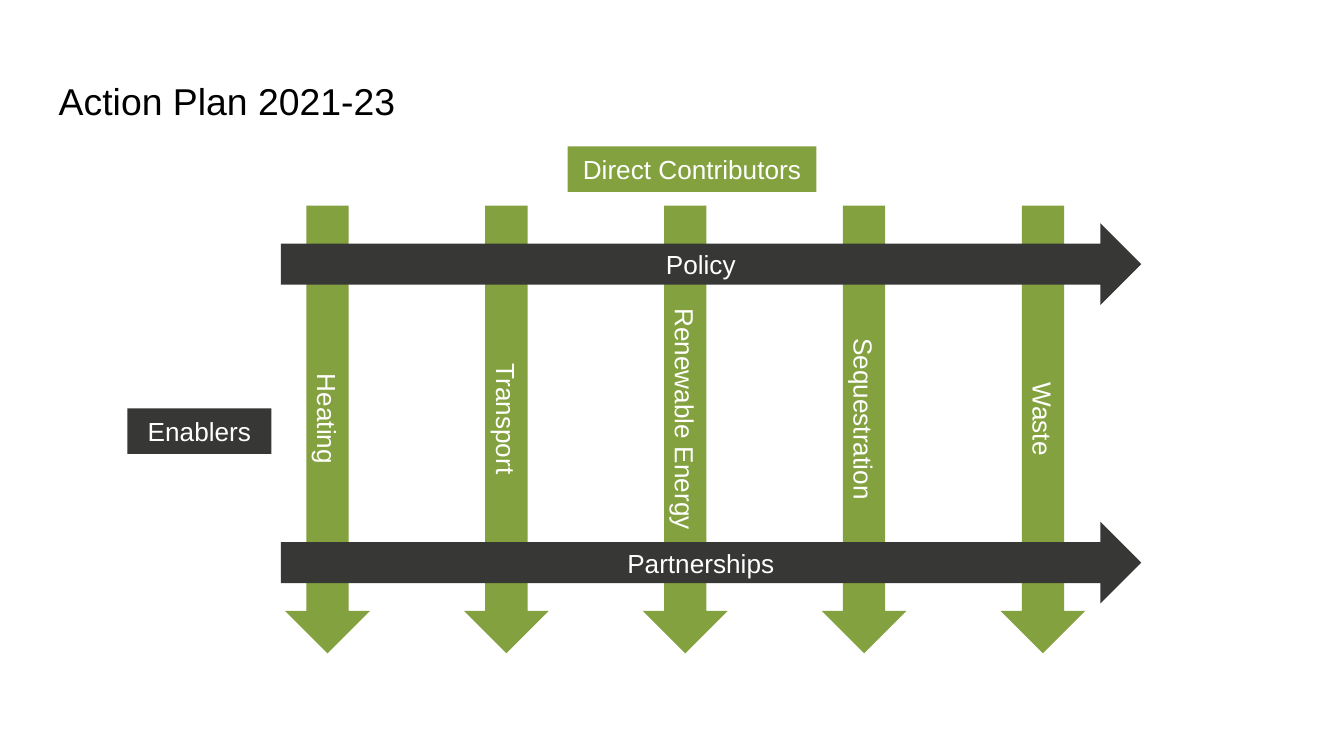
from dataclasses import dataclass

import pptx
import pptx.dml.color
import pptx.enum.shapes
import pptx.enum.text
import pptx.util

Cm = pptx.util.Cm
RGBColor = pptx.dml.color.RGBColor
Shape = pptx.enum.shapes.MSO_SHAPE
Align = pptx.enum.text.PP_ALIGN
Anchor = pptx.enum.text.MSO_ANCHOR

GREEN = RGBColor(0x83, 0xA1, 0x3F)
DARK = RGBColor(0x37, 0x37, 0x36)
WHITE = RGBColor(0xFF, 0xFF, 0xFF)
BLACK = RGBColor(0, 0, 0)


@dataclass
class Block:
    """A filled shape with a label; lengths in centimetres."""
    text: str
    left: float
    top: float
    width: float
    height: float
    fill: RGBColor
    kind: Shape = Shape.RIGHT_ARROW
    turn: float = 0
    wrap: bool = True


def write(shape, text: str, *, size: float = 14, color: RGBColor = WHITE,
          align: Align = Align.CENTER, anchor: Anchor = Anchor.MIDDLE,
          wrap: bool = True) -> None:
    frame = shape.text_frame
    frame.text = text
    frame.word_wrap = wrap
    frame.vertical_anchor = anchor
    line = frame.paragraphs[0]
    line.alignment = align
    line.font.name = "Arial"
    line.font.size = pptx.util.Pt(size)
    line.font.color.rgb = color


def draw(slide, block: Block) -> None:
    shape = slide.shapes.add_shape(
        block.kind, Cm(block.left), Cm(block.top),
        Cm(block.width), Cm(block.height))
    shape.rotation = block.turn
    shape.shadow.inherit = False
    shape.fill.solid()
    shape.fill.fore_color.rgb = block.fill
    shape.line.fill.background()
    write(shape, block.text, wrap=block.wrap)


def main() -> None:
    deck = pptx.Presentation()
    deck.slide_width, deck.slide_height = Cm(25.4), Cm(14.29)
    slide = deck.slides.add_slide(deck.slide_layouts[5])

    # Title
    title = slide.shapes.title
    title.left, title.top = Cm(0.87), Cm(1.24)
    title.width, title.height = Cm(23.67), Cm(1.6)
    frame = title.text_frame
    frame.margin_left = frame.margin_right = Cm(0.24)
    frame.margin_top = frame.margin_bottom = Cm(0.24)
    write(title, "Action Plan 2021-23", size=20, color=BLACK,
          align=Align.LEFT, anchor=Anchor.TOP)

    # Direct contributors: arrows turned to point down
    themes = ["Heating", "Transport", "Renewable Energy",
              "Sequestration", "Waste"]
    for i, name in enumerate(themes):
        draw(slide, Block(name, 1.96 + 3.38 * i, 7.32, 8.46, 1.6,
                          GREEN, turn=90))

    # Group labels
    draw(slide, Block("Enablers", 2.41, 7.72, 2.72, 0.86, DARK,
                      Shape.RECTANGLE, wrap=False))
    draw(slide, Block("Direct Contributors", 10.73, 2.77, 4.7, 0.86, GREEN,
                      Shape.RECTANGLE, wrap=False))

    # Enablers: arrows across
    for name, top in [("Policy", 4.22), ("Partnerships", 9.86)]:
        draw(slide, Block(name, 5.31, top, 16.26, 1.55, DARK))

    deck.save("out.pptx")


if __name__ == "__main__":
    main()
